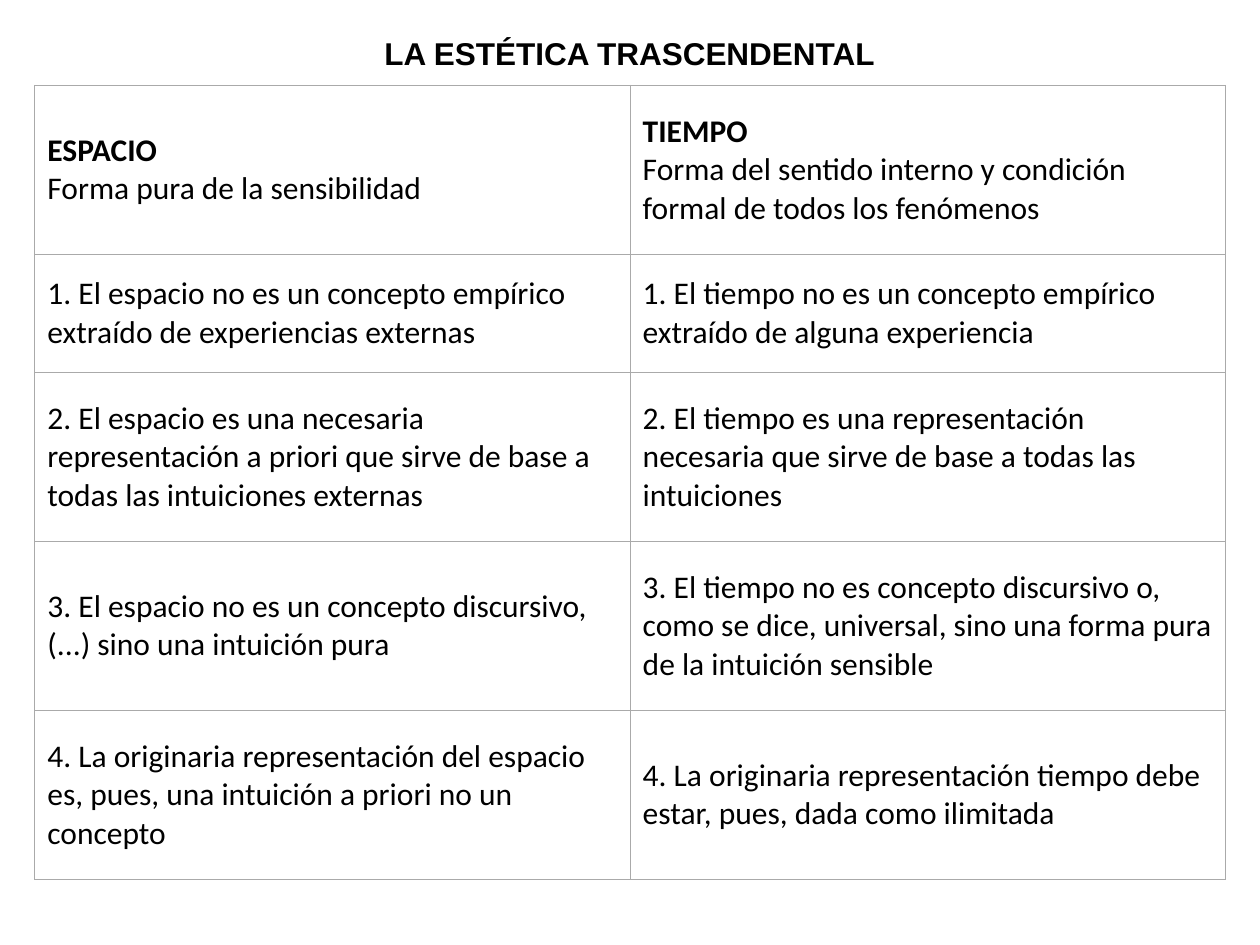
from lxml.etree import SubElement
from pptx import Presentation
from pptx.dml.color import RGBColor
from pptx.enum.text import MSO_ANCHOR as Anchor, MSO_AUTO_SIZE as AutoSize, PP_ALIGN as Align
from pptx.oxml.ns import qn
from pptx.util import Pt

BLACK = RGBColor(0x00, 0x00, 0x00)
BORDER_GREY = RGBColor(0xAA, 0xAA, 0xAA)

TITLE = "LA ESTÉTICA TRASCENDENTAL"
HEADINGS = [
    ("ESPACIO", "Forma pura de la sensibilidad"),
    ("TIEMPO", "Forma del sentido interno y condición formal de todos los fenómenos"),
]
THESES = [
    ("1. El espacio no es un concepto empírico extraído de experiencias externas",
     "1. El tiempo no es un concepto empírico extraído de alguna experiencia"),
    ("2. El espacio es una necesaria representación a priori que sirve de base a todas "
     "las intuiciones externas",
     "2. El tiempo es una representación necesaria que sirve de base a todas las intuiciones"),
    ("3. El espacio no es un concepto discursivo, (...) sino una intuición pura",
     "3. El tiempo no es concepto discursivo o, como se dice, universal, sino una forma "
     "pura de la intuición sensible"),
    ("4. La originaria representación del espacio es, pues, una intuición a priori no un concepto",
     "4. La originaria representación tiempo debe estar, pues, dada como ilimitada"),
]
TALL_ROW, SHORT_ROW = 96.6, 67.4
ROW_HEIGHTS = [TALL_ROW, SHORT_ROW, TALL_ROW, TALL_ROW, TALL_ROW]


def add_span(para, text, font_name, bold=False):
    span = para.add_run()
    span.text = text
    font = span.font
    font.name, font.size, font.bold = font_name, Pt(18), bold
    font.color.rgb = BLACK


def add_borders(cell):
    properties = cell._tc.get_or_add_tcPr()
    for side in ("L", "R", "T", "B"):
        line = SubElement(properties, qn(f"a:ln{side}"), w=str(Pt(0.75)))
        fill = SubElement(line, qn("a:solidFill"))
        SubElement(fill, qn("a:srgbClr"), val=str(BORDER_GREY))


def add_title(page, left, top, width, height):
    box = page.shapes.add_textbox(Pt(left), Pt(top), Pt(width), Pt(height))
    frame = box.text_frame
    frame.word_wrap = False
    frame.auto_size = AutoSize.SHAPE_TO_FIT_TEXT
    frame.vertical_anchor = Anchor.MIDDLE
    para = frame.paragraphs[0]
    para.alignment = Align.CENTER
    add_span(para, TITLE, "Arial", bold=True)


def add_comparison(page, left, top, width):
    """Two equal columns: a heading row, then one row for each pair of theses."""
    columns = len(HEADINGS)
    table = page.shapes.add_table(len(ROW_HEIGHTS), columns, Pt(left), Pt(top),
                                  Pt(width), Pt(sum(ROW_HEIGHTS))).table
    table.first_row = table.horz_banding = False
    for column in table.columns:
        column.width = Pt(width / columns)
    for row, height in zip(table.rows, ROW_HEIGHTS):
        row.height = Pt(height)
    for cell in table.iter_cells():
        cell.vertical_anchor = Anchor.MIDDLE
        add_borders(cell)
        cell.fill.background()

    for index, (name, definition) in enumerate(HEADINGS):
        para = table.cell(0, index).text_frame.paragraphs[0]
        add_span(para, name, "Calibri", bold=True)
        para.add_line_break()
        add_span(para, definition, "Calibri")
    for row_index, pair in enumerate(THESES, start=1):
        for index, thesis in enumerate(pair):
            para = table.cell(row_index, index).text_frame.paragraphs[0]
            add_span(para, thesis, "Calibri")


def main():
    deck = Presentation()
    deck.slide_width, deck.slide_height = Pt(720), Pt(540)
    page = deck.slides.add_slide(deck.slide_layouts[6])
    add_comparison(page, 19.9, 48.8, 680.4)
    add_title(page, 211, 15.5, 297.6, 29)
    deck.save("out.pptx")


if __name__ == "__main__":
    main()
